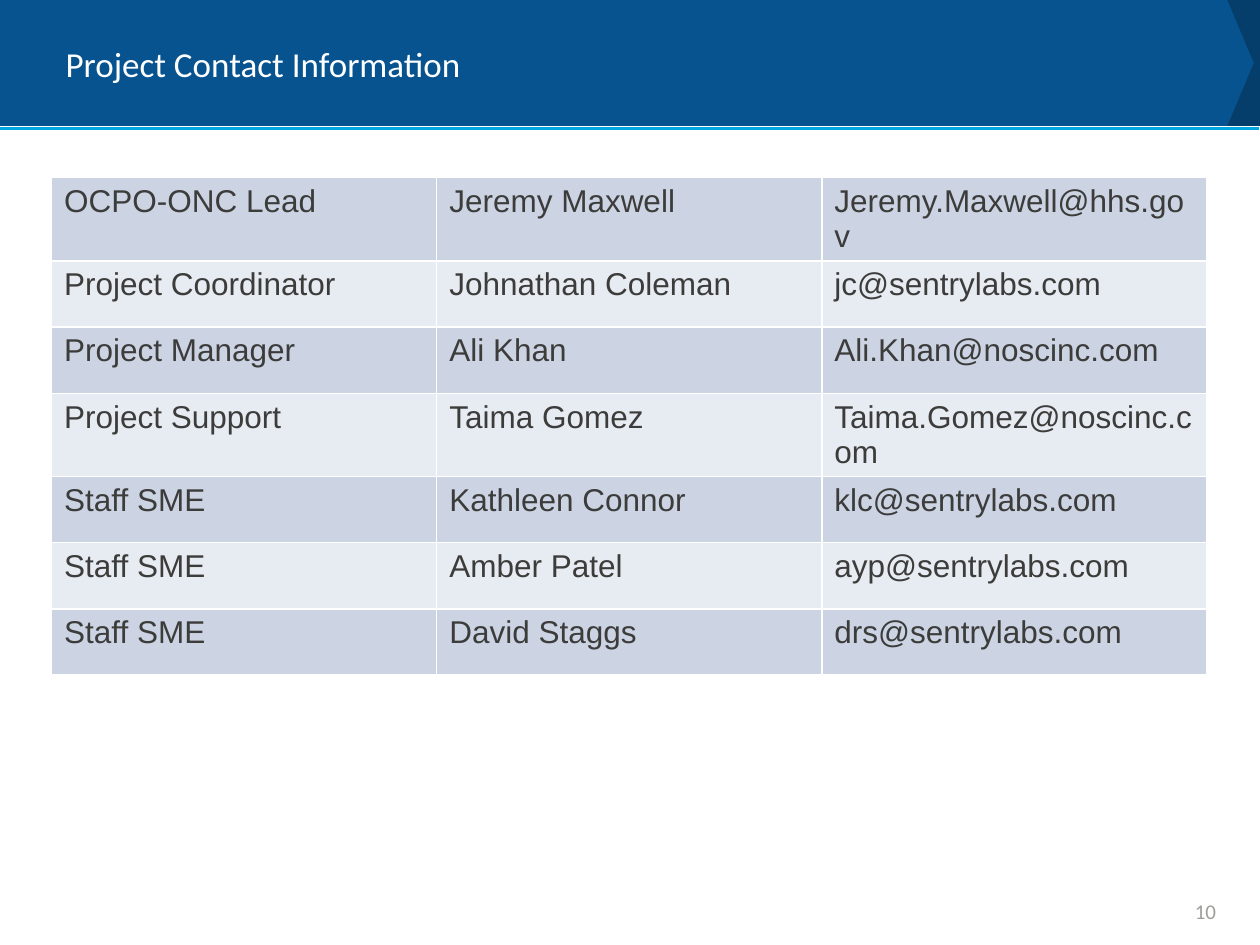
from pptx import Presentation
from pptx.dml.color import RGBColor
from pptx.enum.shapes import MSO_CONNECTOR, MSO_SHAPE
from pptx.enum.text import MSO_ANCHOR, PP_ALIGN
from pptx.oxml.ns import qn
from pptx.util import Inches, Pt
from lxml import etree

PENTAGON = MSO_SHAPE.PENTAGON
STRAIGHT = MSO_CONNECTOR.STRAIGHT
MIDDLE = MSO_ANCHOR.MIDDLE
LEFT, RIGHT = PP_ALIGN.LEFT, PP_ALIGN.RIGHT

WHITE = RGBColor(0xFF, 0xFF, 0xFF)
NAVY = RGBColor(0x05, 0x3E, 0x6B)
BLUE = RGBColor(0x07, 0x53, 0x8F)
CYAN = RGBColor(0x00, 0xA8, 0xE1)
DARK = RGBColor(0x3C, 0x3C, 0x3B)
GRAY = RGBColor(0x9E, 0x9E, 0x9C)
BANDS = (RGBColor(0xCC, 0xD4, 0xE4), RGBColor(0xE7, 0xEB, 0xF2))

CONTACTS = [
    ("OCPO-ONC Lead", "Jeremy Maxwell", "Jeremy.Maxwell@hhs.gov"),
    ("Project Coordinator", "Johnathan Coleman", "jc@sentrylabs.com"),
    ("Project Manager", "Ali Khan", "Ali.Khan@noscinc.com"),
    ("Project Support", "Taima Gomez", "Taima.Gomez@noscinc.com"),
    ("Staff SME", "Kathleen Connor", "klc@sentrylabs.com"),
    ("Staff SME", "Amber Patel", "ayp@sentrylabs.com"),
    ("Staff SME", "David Staggs", "drs@sentrylabs.com"),
]


class SlideBuilder:
    heading_font = "Calibri"
    body_font = "Arial"

    def __init__(self, prs):
        self.s = prs.slides.add_slide(prs.slide_layouts[5])

    def set_text(self, tf, text, font, size, color, align=LEFT):
        tf.text = text
        p = tf.paragraphs[0]
        p.alignment = align
        for r in p.runs:
            r.font.name, r.font.size = font, Pt(size)
            r.font.color.rgb = color

    def pentagon(self, x, y, w, h, point, color):
        sp = self.s.shapes.add_shape(PENTAGON, Inches(x), Inches(y), Inches(w), Inches(h))
        sp.adjustments[0] = point
        sp.shadow.inherit = False
        sp.fill.solid()
        sp.fill.fore_color.rgb = color
        sp.line.fill.background()

    def rule(self, x1, x2, y, color, width):
        line = self.s.shapes.add_connector(STRAIGHT, Inches(x1), Inches(y), Inches(x2), Inches(y))
        line.line.color.rgb = color
        line.line.width = Pt(width)
        etree.SubElement(line.element.spPr, qn("a:effectLst"))

    def title(self, text, x, y, w, h):
        sp = self.s.shapes.title
        sp.left, sp.top, sp.width, sp.height = Inches(x), Inches(y), Inches(w), Inches(h)
        sp.element.getparent().append(sp.element)  # bring in front of the banner
        sp.text_frame.vertical_anchor = MIDDLE
        self.set_text(sp.text_frame, text, self.heading_font, 20, WHITE)

    def label(self, text, x, y, w, h, size, color, align):
        sp = self.s.shapes.add_textbox(Inches(x), Inches(y), Inches(w), Inches(h))
        tf = sp.text_frame
        tf.word_wrap = True
        tf.vertical_anchor = MIDDLE
        self.set_text(tf, text, self.heading_font, size, color, align)

    def cell_borders(self, cell, color, width):
        """Outline a cell; must run before its fill is set, as borders come first in the XML."""
        tcPr = cell._tc.get_or_add_tcPr()
        for side in ("a:lnL", "a:lnR", "a:lnT", "a:lnB"):
            ln = etree.SubElement(tcPr, qn(side), w=str(Pt(width)))
            fill = etree.SubElement(ln, qn("a:solidFill"))
            etree.SubElement(fill, qn("a:srgbClr"), val=str(color))

    def table(self, rows, x, y, w, h):
        frame = self.s.shapes.add_table(len(rows), len(rows[0]), Inches(x), Inches(y),
                                        Inches(w), Inches(h))
        table = frame.table
        table.first_row = False
        for i, row in enumerate(rows):
            for j, text in enumerate(row):
                cell = table.cell(i, j)
                self.cell_borders(cell, WHITE, 1)
                cell.fill.solid()
                cell.fill.fore_color.rgb = BANDS[i % 2]
                self.set_text(cell.text_frame, text, self.body_font, 18, DARK)


def main():
    prs = Presentation()
    prs.slide_width, prs.slide_height = Inches(10), Inches(7.5)
    slide = SlideBuilder(prs)
    slide.pentagon(9.55, 0, 0.45, 1, 0, NAVY)
    slide.pentagon(0, 0, 9.95, 1, 0.21, BLUE)
    slide.rule(0, 9.99, 1.02, CYAN, 2.25)
    slide.title("Project Contact Information", 0.42, 0.08, 9.17, 0.85)
    slide.table(CONTACTS, 0.41, 1.41, 9.17, 3.68)
    slide.label("10", 7.42, 7.11, 2.33, 0.25, 12, GRAY, RIGHT)
    prs.save("out.pptx")


if __name__ == "__main__":
    main()
